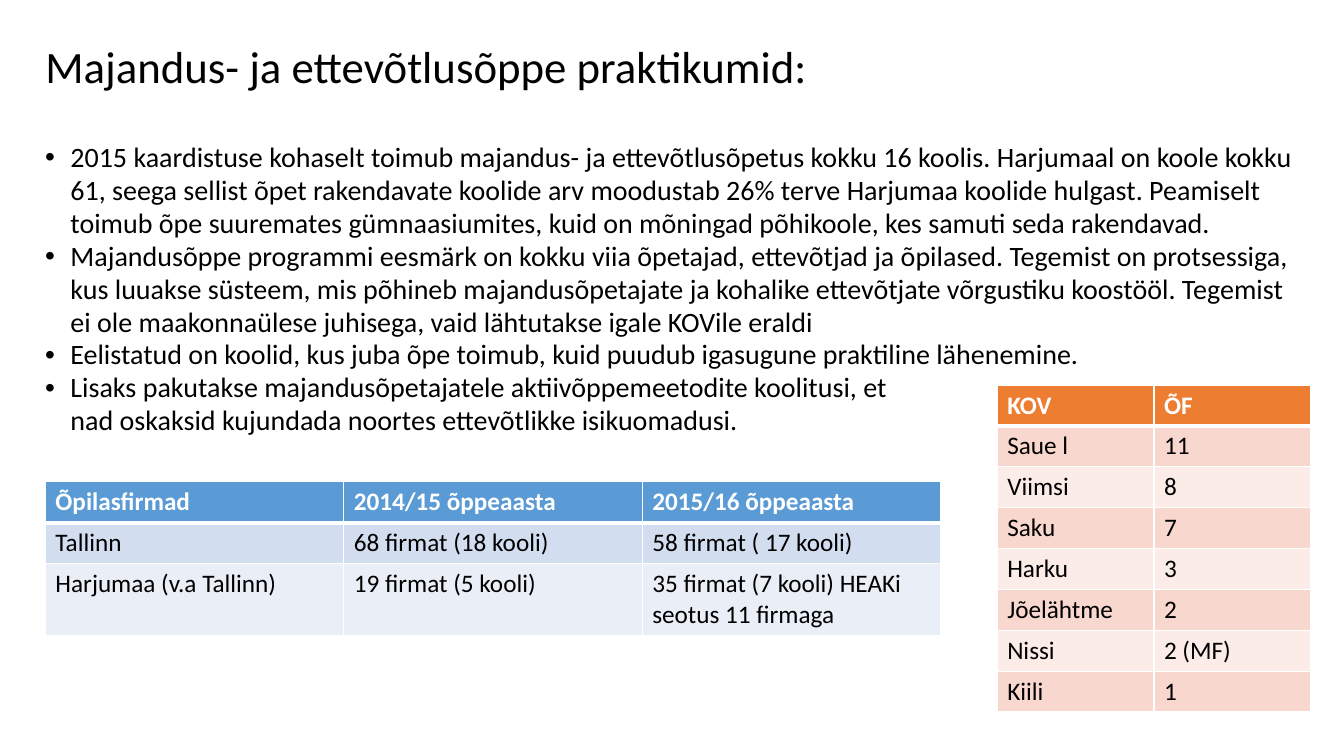
from lxml import etree
from pptx import Presentation
from pptx.dml.color import RGBColor
from pptx.enum.text import MSO_ANCHOR, MSO_AUTO_SIZE, PP_ALIGN
from pptx.oxml.ns import qn
from pptx.util import Inches, Pt

LEFT = PP_ALIGN.LEFT
MIDDLE = MSO_ANCHOR.MIDDLE
NO_AUTOFIT = MSO_AUTO_SIZE.NONE
FONT = "Calibri"
BLACK, WHITE = "000000", "FFFFFF"
BLUES = ("5B9BD5", "D2DEEF", "EAEFF7")
ORANGES = ("ED7D31", "F8D7CE", "FCECE8")
ROW_HEIGHT = 0.405

TITLE = "Majandus- ja ettevõtlusõppe praktikumid:"
BULLETS = [
    "2015 kaardistuse kohaselt toimub majandus- ja ettevõtlusõpetus kokku 16 koolis. "
    "Harjumaal on koole kokku 61, seega sellist õpet rakendavate koolide arv moodustab "
    "26% terve Harjumaa koolide hulgast. Peamiselt toimub õpe suuremates gümnaasiumites, "
    "kuid on mõningad põhikoole, kes samuti seda rakendavad.",
    "Majandusõppe programmi eesmärk on kokku viia õpetajad, ettevõtjad ja õpilased. "
    "Tegemist on protsessiga, kus luuakse süsteem, mis põhineb majandusõpetajate ja "
    "kohalike ettevõtjate võrgustiku koostööl. Tegemist ei ole maakonnaülese juhisega, "
    "vaid lähtutakse igale KOVile eraldi",
    "Eelistatud on koolid, kus juba õpe toimub, kuid puudub igasugune praktiline lähenemine.",
    "Lisaks pakutakse majandusõpetajatele aktiivõppemeetodite koolitusi, et",
]
CONTINUATION = "nad oskaksid kujundada noortes ettevõtlikke isikuomadusi."
STUDENT_FIRMS = [
    ("Õpilasfirmad", "2014/15 õppeaasta", "2015/16 õppeaasta"),
    ("Tallinn", "68 firmat (18 kooli)", "58 firmat ( 17 kooli)"),
    ("Harjumaa (v.a Tallinn)", "19 firmat (5 kooli)",
     "35 firmat (7 kooli) HEAKi seotus 11 firmaga"),
]
MUNICIPALITIES = [
    ("KOV", "ÕF"), ("Saue l", "11"), ("Viimsi", "8"), ("Saku", "7"),
    ("Harku", "3"), ("Jõelähtme", "2"), ("Nissi", "2 (MF)"), ("Kiili", "1"),
]


def color(value):
    return RGBColor.from_string(value)


def write(para, text, size, fill=BLACK, bold=False):
    span = para.add_run()
    span.text = text
    for name, value in {"name": FONT, "size": Pt(size), "bold": bold}.items():
        setattr(span.font, name, value)
    span.font.color.rgb = color(fill)


def set_indent(para, bulleted):
    """Hang the bullet, or line plain text up with the bulleted text."""
    properties = para._p.get_or_add_pPr()
    properties.set("marL", str(Inches(0.25)))
    properties.set("indent", str(Inches(-0.25 if bulleted else 0)))
    if bulleted:
        etree.SubElement(properties, qn("a:buFont"), typeface="Arial")
        etree.SubElement(properties, qn("a:buChar"), char="•")


def add_title(page, box):
    title = page.shapes.title
    title.left, title.top, title.width, title.height = map(Inches, box)
    frame = title.text_frame
    settings = {"auto_size": NO_AUTOFIT, "word_wrap": True, "vertical_anchor": MIDDLE}
    for name, value in settings.items():
        setattr(frame, name, value)
    para = frame.paragraphs[0]
    para.alignment, para.line_spacing = LEFT, 0.9
    write(para, TITLE, 32)


def add_body(page, box):
    frame = page.shapes.add_textbox(*map(Inches, box)).text_frame
    frame.word_wrap, frame.auto_size = True, NO_AUTOFIT
    for index, text in enumerate([*BULLETS, CONTINUATION]):
        para = frame.add_paragraph() if index else frame.paragraphs[0]
        para.line_spacing = 0.98
        set_indent(para, bulleted=text != CONTINUATION)
        write(para, text, 20)


def add_borders(cell, bottom):
    properties = cell._tc.get_or_add_tcPr()
    for side, width in {"lnL": 1, "lnR": 1, "lnT": 1, "lnB": bottom}.items():
        line = etree.SubElement(properties, qn(f"a:{side}"), w=str(Pt(width)))
        fill = etree.SubElement(line, qn("a:solidFill"))
        etree.SubElement(fill, qn("a:srgbClr"), val=WHITE)


def add_banded_table(page, box, rows, palette):
    """Spread columns evenly; the last row takes the height that remains."""
    left, top, width, height = box
    columns = len(rows[0])
    table = page.shapes.add_table(len(rows), columns, *map(Inches, box)).table
    for column in table.columns:
        column.width = Inches(width / columns)
    for index, texts in enumerate(rows):
        last = index == len(rows) - 1
        table.rows[index].height = Inches(height - ROW_HEIGHT * index if last else ROW_HEIGHT)
        header = index == 0
        band = palette[0] if header else palette[2 - index % 2]
        for cell, text in zip(table.rows[index].cells, texts):
            add_borders(cell, bottom=3 if header else 1)
            cell.fill.solid()
            cell.fill.fore_color.rgb = color(band)
            write(cell.text_frame.paragraphs[0], text, 18, WHITE if header else BLACK, header)


def main():
    deck = Presentation()
    deck.slide_width, deck.slide_height = Inches(13.33), Inches(7.5)
    page = deck.slides.add_slide(deck.slide_layouts[5])
    add_title(page, (0.35, 0.38, 11.5, 0.61))
    add_body(page, (0.35, 1.35, 12.65, 5.96))
    add_banded_table(page, (0.45, 4.78, 8.88, 1.51), STUDENT_FIRMS, BLUES)
    add_banded_table(page, (9.89, 3.82, 3.11, 3.24), MUNICIPALITIES, ORANGES)
    deck.save("out.pptx")


if __name__ == "__main__":
    main()
